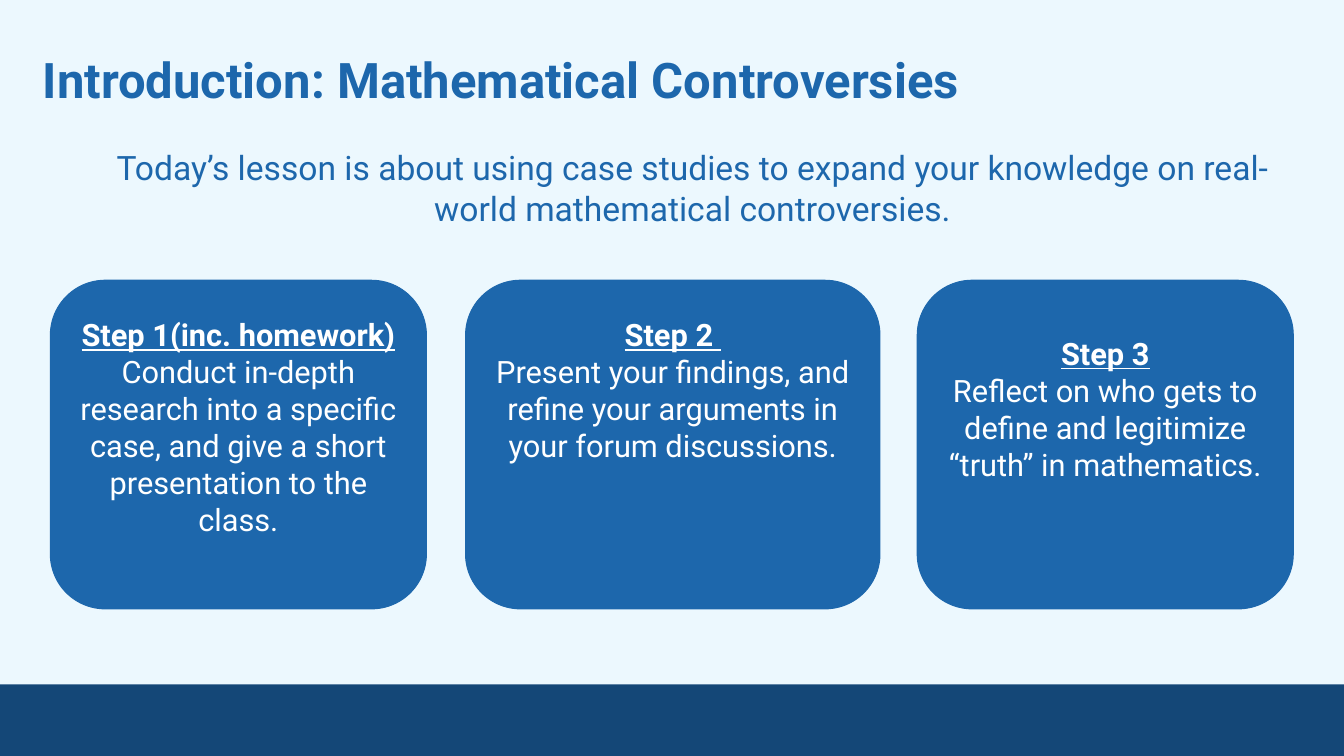
from dataclasses import dataclass

from pptx import Presentation
from pptx.dml.color import RGBColor
from pptx.enum import shapes, text
from pptx.util import Pt

PALE = RGBColor(0xEC, 0xF8, 0xFE)
BLUE = RGBColor(0x1D, 0x67, 0xAC)
NAVY = RGBColor(0x14, 0x47, 0x77)
WHITE = RGBColor(0xFF, 0xFF, 0xFF)
FONT = "Roboto"
CARD_TOP, CARD_HEIGHT = 200.2, 234.7


@dataclass(frozen=True)
class Step:
    heading: str
    body: str
    left: float
    width: float
    top_inset: float


STEPS = [
    Step("Step 1(inc. homework)",
         "Conduct in-depth research into a specific case, and give a short "
         "presentation to the class.", 36, 268.6, 14),
    Step("Step 2 ",
         "Present your findings, and refine your arguments in your forum "
         "discussions.", 332.6, 296, 14),
    Step("Step 3",
         "Reflect on who gets to define and legitimize “truth” in mathematics.",
         655.2, 268.6, 27.5),
]


def style_paragraph(paragraph, content: str, size: float, color: RGBColor,
                    align, bold: bool = False, underline: bool = False) -> None:
    paragraph.text = content
    paragraph.alignment = align
    font = paragraph.font
    font.name, font.size = FONT, Pt(size)
    font.bold, font.underline = bold, underline
    font.color.rgb = color


def set_frame(frame, inset: float, anchor) -> None:
    frame.word_wrap = True
    frame.vertical_anchor = anchor
    frame.margin_left = frame.margin_right = Pt(inset)
    frame.margin_top = frame.margin_bottom = Pt(inset)


def add_block(slide, kind, left: float, top: float, width: float,
              height: float, color: RGBColor):
    shape = slide.shapes.add_shape(kind, Pt(left), Pt(top), Pt(width), Pt(height))
    shape.shadow.inherit = False
    shape.fill.solid()
    shape.fill.fore_color.rgb = color
    shape.line.fill.background()
    return shape


def add_label(slide, content: str, left: float, top: float, width: float,
              height: float, inset: float, size: float, align, anchor,
              bold: bool = False) -> None:
    box = slide.shapes.add_textbox(Pt(left), Pt(top), Pt(width), Pt(height))
    set_frame(box.text_frame, inset, anchor)
    style_paragraph(box.text_frame.paragraphs[0], content, size, BLUE, align, bold)


def add_step(slide, step: Step) -> None:
    card = add_block(slide, shapes.MSO_SHAPE.ROUNDED_RECTANGLE, step.left,
                     CARD_TOP, step.width, CARD_HEIGHT, BLUE)
    card.adjustments[0] = 0.167
    card.line.color.rgb = BLUE
    card.line.width = Pt(0.75)
    frame = card.text_frame
    set_frame(frame, 7.2, text.MSO_ANCHOR.TOP)
    frame.margin_top = Pt(step.top_inset)
    center = text.PP_ALIGN.CENTER
    style_paragraph(frame.paragraphs[0], step.heading, 22, WHITE, center, True, True)
    style_paragraph(frame.add_paragraph(), step.body, 22, WHITE, center)


def main() -> None:
    presentation = Presentation()
    presentation.slide_width, presentation.slide_height = Pt(960), Pt(540)
    slide = presentation.slides.add_slide(presentation.slide_layouts[6])
    slide.background.fill.solid()
    slide.background.fill.fore_color.rgb = PALE

    # Footer band
    add_block(slide, shapes.MSO_SHAPE.RECTANGLE, 0, 488.9, 960, 51.1, NAVY)

    # Title and introduction
    add_label(slide, "Introduction: Mathematical Controversies",
              21.2, 25.2, 877.7, 61.9, 9.4, 35,
              text.PP_ALIGN.LEFT, text.MSO_ANCHOR.MIDDLE, bold=True)
    add_label(slide, "Today’s lesson is about using case studies to expand your "
              "knowledge on real-world mathematical controversies.",
              65.5, 97.9, 858.2, 90, 7.2, 24,
              text.PP_ALIGN.CENTER, text.MSO_ANCHOR.TOP)

    # Step cards
    for step in STEPS:
        add_step(slide, step)

    presentation.save("out.pptx")


if __name__ == "__main__":
    main()
